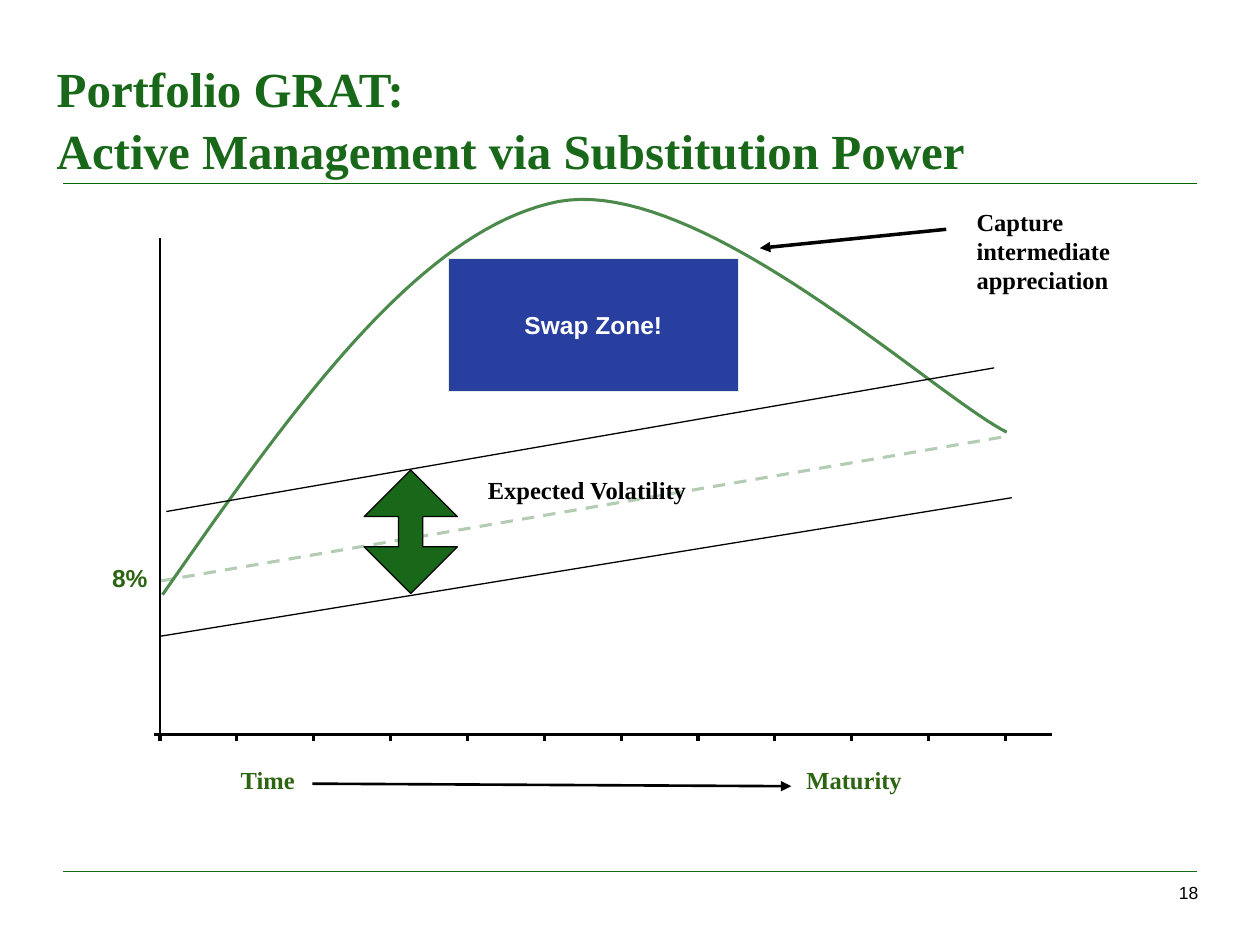
from pptx import Presentation
from pptx.dml.color import RGBColor
from pptx.enum import dml, shapes, text
from pptx.oxml.ns import qn
from pptx.util import Inches, Pt
from lxml import etree

SERIF, SANS = "Times New Roman", "Arial"
GREEN, LEAF, BLACK = "196819", "2D6411", "000000"


def color(hex_code):
    return RGBColor.from_string(hex_code)


def add_line(slide, start, end, hex_code, width, dashed=False, arrow=False):
    line = slide.shapes.add_connector(
        shapes.MSO_CONNECTOR.STRAIGHT, *(Inches(v) for v in (*start, *end)))
    line.line.color.rgb = color(hex_code)
    line.line.width = Pt(width)
    if dashed:
        line.line.dash_style = dml.MSO_LINE.DASH
    if arrow:
        etree.SubElement(line.line._get_or_add_ln(), qn("a:tailEnd"), type="triangle")
    etree.SubElement(line._element.spPr, qn("a:effectLst"))


def style_shape(shape, line_hex, width, fill_hex=None):
    shape.shadow.inherit = False
    if fill_hex:
        shape.fill.solid()
        shape.fill.fore_color.rgb = color(fill_hex)
    else:
        shape.fill.background()
    shape.line.color.rgb = color(line_hex)
    shape.line.width = Pt(width)


def write(shape, lines, font, size, hex_code, bold=True, align=text.PP_ALIGN.LEFT,
          anchor=text.MSO_ANCHOR.TOP, inset=(0.09, 0.04), wrap=True, tab=None):
    """Write lines, parted by line breaks, into the shape's only paragraph."""
    frame = shape.text_frame
    frame.auto_size = text.MSO_AUTO_SIZE.NONE
    frame.word_wrap = wrap
    frame.vertical_anchor = anchor
    frame.margin_left = frame.margin_right = Inches(inset[0])
    frame.margin_top = frame.margin_bottom = Inches(inset[1])
    paragraph = frame.paragraphs[0]
    paragraph.alignment = align
    if tab:
        stops = etree.SubElement(paragraph._p.get_or_add_pPr(), qn("a:tabLst"))
        etree.SubElement(stops, qn("a:tab"), pos=str(Inches(tab)), algn="l")
    for i, words in enumerate(lines):
        if i:
            paragraph.add_line_break()
        run = paragraph.add_run()
        run.text = words
        run.font.name, run.font.size, run.font.bold = font, Pt(size), bold
        run.font.color.rgb = color(hex_code)
    return paragraph


def add_label(slide, box, lines, font, size, hex_code, **options):
    label = slide.shapes.add_textbox(*(Inches(v) for v in box))
    write(label, lines, font, size, hex_code, **options)


def add_frame(slide, left, top, width, height):
    """Title, the two rules and the page number."""
    title = slide.shapes.title
    title.left, title.top = Inches(left - 0.05), Inches(top - 0.58)
    title.width, title.height = Inches(8.55), Inches(0.54)
    heading = write(title, ["Portfolio GRAT:", "Active Management via Substitution Power"],
                    SERIF, 28, GREEN, anchor=text.MSO_ANCHOR.BOTTOM, inset=(0, 0))
    heading.line_spacing = 1.05
    right, bottom = left + width, top + height
    add_line(slide, (left, top), (right, top), "006600", 0.5)
    add_line(slide, (left, bottom), (right, bottom), GREEN, 0.5)
    add_label(slide, (right - 0.74, bottom + 0.08, 0.75, 0.28), ["18"], SANS, 10, BLACK,
              bold=False, align=text.PP_ALIGN.RIGHT, inset=(0, 0))


def add_axes(slide, left, top, width, height):
    """Axes with evenly spaced ticks, and the time caption below."""
    base = top + height
    add_line(slide, (left, top), (left, base), BLACK, 1.5)
    add_line(slide, (left - 0.05, base), (left, base), BLACK, 1.75)
    add_line(slide, (left, base), (left + width, base), BLACK, 1.5)
    for i in range(12):
        tick = left + 0.61 * i
        add_line(slide, (tick, base + 0.05), (tick, base), BLACK, 1.75)
    add_label(slide, (left - 0.38, top + 2.58, 0.36, 0.23), ["8%"], SANS, 14, LEAF,
              inset=(0, 0))
    add_label(slide, (left + 0.55, base + 0.2, 6.54, 0.32), ["Time\tMaturity"],
              SERIF, 14, LEAF, tab=4.49)
    add_line(slide, (left + 1.21, base + 0.39), (left + 5.01, base + 0.41),
             BLACK, 1.5, arrow=True)


def bezier(points, steps=40):
    """Points along a cubic curve, after its start."""
    for i in range(1, steps + 1):
        t = i / steps
        weights = ((1 - t) ** 3, 3 * t * (1 - t) ** 2, 3 * t * t * (1 - t), t ** 3)
        yield tuple(sum(w * p[axis] for w, p in zip(weights, points)) for axis in (0, 1))


def add_growth(slide, left, top):
    """Expected growth, its volatility band and the actual value curve."""
    def at(x, y):
        return left + x, top + y

    add_line(slide, at(0.01, 2.72), at(6.68, 1.58), "B3CCB3", 1.75, dashed=True)

    start, peak, end = at(0.02, 2.83), at(3.16, -0.29), at(6.72, 1.54)
    rise = (start, at(1.03, 1.38), at(2.05, -0.07), peak)
    fall = (peak, at(4.28, -0.5), at(6.13, 1.24), end)
    builder = slide.shapes.build_freeform(*(Inches(v) for v in start), scale=1.0)
    builder.add_line_segments(
        [(Inches(x), Inches(y)) for part in (rise, fall) for x, y in bezier(part)],
        close=False)
    style_shape(builder.convert_to_shape(), "4C8A4C", 1.75)

    add_line(slide, at(0.05, 2.17), at(6.62, 1.03), BLACK, 0.75)
    add_line(slide, at(0, 3.16), at(6.76, 2.06), BLACK, 0.75)


def add_callouts(slide, left, top):
    """Notes on the curve, the volatility band and the swap zone."""
    def box(x, y, width, height):
        return left + x, top + y, width, height

    centred = dict(align=text.PP_ALIGN.CENTER, anchor=text.MSO_ANCHOR.MIDDLE, wrap=False)

    add_label(slide, box(6.39, -0.29, 1.51, 0.8), ["Capture intermediate ", "appreciation"],
              SERIF, 14, BLACK)
    add_line(slide, (left + 6.24, top - 0.07), (left + 4.76, top + 0.08), BLACK, 2, arrow=True)

    spread = slide.shapes.add_shape(shapes.MSO_SHAPE.UP_DOWN_ARROW,
                                    *(Inches(v) for v in box(1.62, 1.84, 0.74, 0.98)))
    spread.adjustments[0], spread.adjustments[1] = 0.5, 0.26
    style_shape(spread, BLACK, 0.75, GREEN)
    add_label(slide, box(2.64, 1.78, 1.5, 0.44), ["Expected Volatility"],
              SERIF, 14, BLACK, **centred)

    swap_zone = slide.shapes.add_shape(shapes.MSO_SHAPE.RECTANGLE,
                                       *(Inches(v) for v in box(2.29, 0.16, 2.3, 1.06)))
    style_shape(swap_zone, "E3EEE3", 0.75, "283FA0")
    write(swap_zone, ["Swap Zone!"], SANS, 14, "FFFFFF", **centred)


def main():
    deck = Presentation()
    deck.slide_width, deck.slide_height = Inches(10), Inches(7.5)
    slide = deck.slides.add_slide(deck.slide_layouts[5])
    add_frame(slide, 0.5, 1.46, 9, 5.46)
    add_axes(slide, 1.27, 1.89, 7.08, 3.94)
    add_growth(slide, 1.27, 1.89)
    add_callouts(slide, 1.27, 1.89)
    deck.save("out.pptx")


if __name__ == "__main__":
    main()
